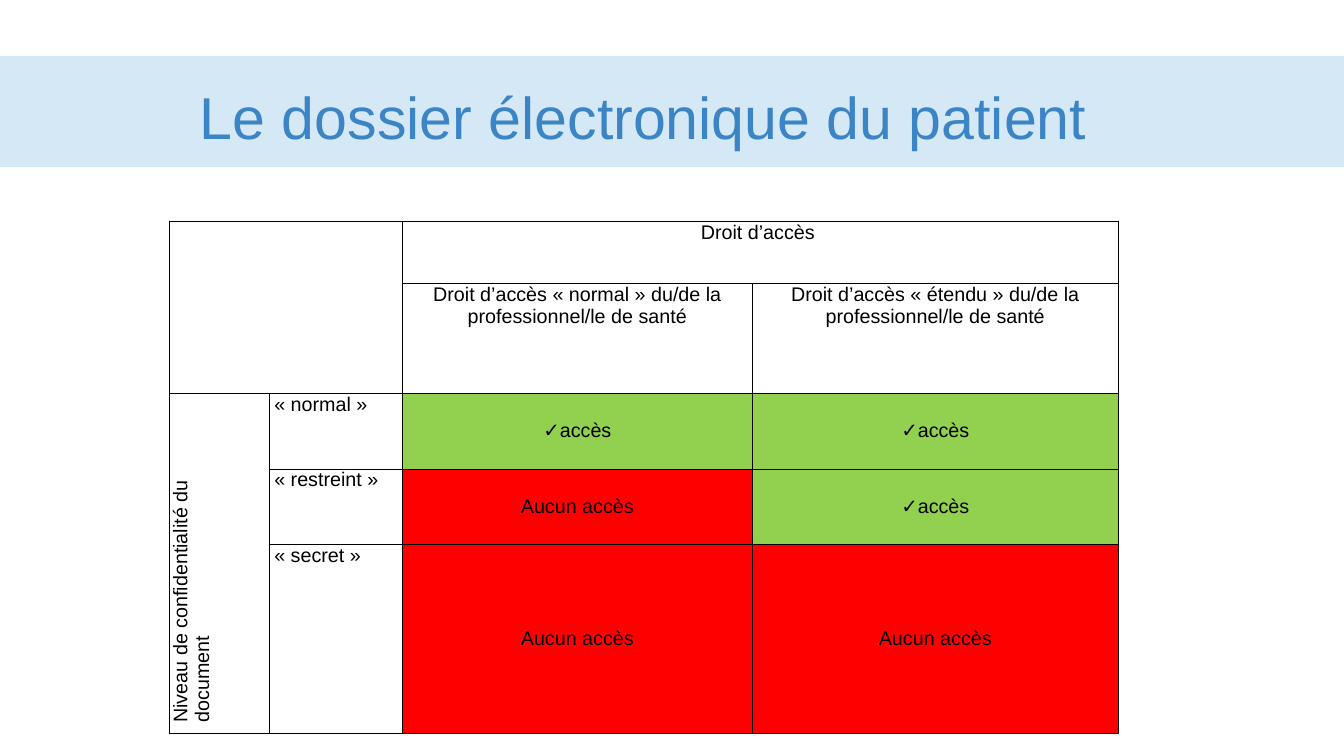
import pptx
import pptx.util
import pptx.dml.color
import pptx.enum.shapes
import pptx.enum.text
import lxml.etree
from pptx.util import Inches

RGBColor = pptx.dml.color.RGBColor
ALIGN = pptx.enum.text.PP_ALIGN
ANCHOR = pptx.enum.text.MSO_ANCHOR

BAND = RGBColor(0xD5, 0xE8, 0xF5)
TITLE = RGBColor(0x3B, 0x85, 0xC6)
BLACK = RGBColor(0x00, 0x00, 0x00)
GREEN = RGBColor(0x92, 0xD0, 0x50)
RED = RGBColor(0xFF, 0x00, 0x00)

FONT = "Arial"
COL_WIDTHS = [1.41, 1.88, 4.93, 5.17]
ROW_HEIGHTS = [0.87, 1.55, 1.07, 1.07, 1.1]
RIGHTS = ["normal", "étendu"]
# Confidentiality level -> access for each right
LEVELS = [("normal", (True, True)),
          ("restreint", (False, True)),
          ("secret", (False, False))]


def write(tf, text, size=20, color=BLACK, align=ALIGN.LEFT, after=0):
    p = tf.paragraphs[0]
    p.alignment = align
    p.space_after = pptx.util.Pt(after)
    r = p.add_run()
    r.text = text
    r.font.name = FONT
    r.font.size = pptx.util.Pt(size)
    r.font.color.rgb = color
    return p


def add_band(slide):
    sp = slide.shapes.add_shape(pptx.enum.shapes.MSO_SHAPE.RECTANGLE, 0,
                                Inches(0.79), Inches(18.96), Inches(1.57))
    sp.shadow.inherit = False
    sp.fill.solid()
    sp.fill.fore_color.rgb = BAND
    sp.line.fill.background()


def add_title(slide, text):
    sp = slide.shapes.add_textbox(Inches(2.76), Inches(0.79),
                                  Inches(15.05), Inches(1.69))
    tf = sp.text_frame
    tf.word_wrap = True
    tf.vertical_anchor = ANCHOR.MIDDLE
    tf.margin_left = tf.margin_right = Inches(0.06)
    tf.margin_top = tf.margin_bottom = Inches(0.06)
    write(tf, text, size=60, color=TITLE)


def add_borders(cell):
    tcPr = cell._tc.get_or_add_tcPr()
    ns = "{http://schemas.openxmlformats.org/drawingml/2006/main}"
    for side in ("lnL", "lnR", "lnT", "lnB"):
        ln = lxml.etree.SubElement(tcPr, ns + side, w=str(pptx.util.Pt(1)))
        fill = lxml.etree.SubElement(ln, ns + "solidFill")
        lxml.etree.SubElement(fill, ns + "srgbClr", val=str(BLACK))


def fill_cell(cell, text, align=ALIGN.CENTER, fill=None):
    if fill is not None:
        cell.fill.solid()
        cell.fill.fore_color.rgb = fill
        cell.vertical_anchor = ANCHOR.MIDDLE
    return write(cell.text_frame, text, align=align, after=6)


def add_grid(slide):
    shape = slide.shapes.add_table(
        len(ROW_HEIGHTS), len(COL_WIDTHS), Inches(2.39), Inches(3.13),
        Inches(sum(COL_WIDTHS)), Inches(sum(ROW_HEIGHTS)))
    table = shape.table
    table.first_row = table.horz_banding = False
    for col, width in zip(table.columns, COL_WIDTHS):
        col.width = Inches(width)
    for row, height in zip(table.rows, ROW_HEIGHTS):
        row.height = Inches(height)
    for cell in table.iter_cells():
        cell.margin_left = cell.margin_right = Inches(0.07)
        cell.margin_top = cell.margin_bottom = 0
        add_borders(cell)
        cell.fill.background()
    return table


def add_access_table(slide):
    table = add_grid(slide)
    table.cell(0, 0).merge(table.cell(1, 1))
    table.cell(0, 2).merge(table.cell(0, 3))
    table.cell(2, 0).merge(table.cell(4, 0))

    # Column headings
    fill_cell(table.cell(0, 2), "Droit d’accès ")
    for col, right in enumerate(RIGHTS, 2):
        fill_cell(table.cell(1, col), f"Droit d’accès « {right} » du/de la "
                                      "professionnel/le de santé")

    # Vertical row heading
    side = table.cell(2, 0)
    side._tc.get_or_add_tcPr().set("vert", "vert270")
    p = fill_cell(side, "Niveau de confidentialité du document", ALIGN.LEFT)
    p._p.get_or_add_pPr().set("marL", str(Inches(0.08)))

    # Levels and access
    for row, (level, accesses) in enumerate(LEVELS, 2):
        fill_cell(table.cell(row, 1), f"« {level} »", ALIGN.JUSTIFY)
        for col, allowed in enumerate(accesses, 2):
            fill_cell(table.cell(row, col),
                      "✓accès" if allowed else "Aucun accès",
                      fill=GREEN if allowed else RED)


def main():
    prs = pptx.Presentation()
    prs.slide_width = Inches(18.96)
    prs.slide_height = Inches(10.67)
    slide = prs.slides.add_slide(prs.slide_layouts[6])
    add_band(slide)
    add_title(slide, "Le dossier électronique du patient")
    add_access_table(slide)
    prs.save("out.pptx")


if __name__ == "__main__":
    main()
